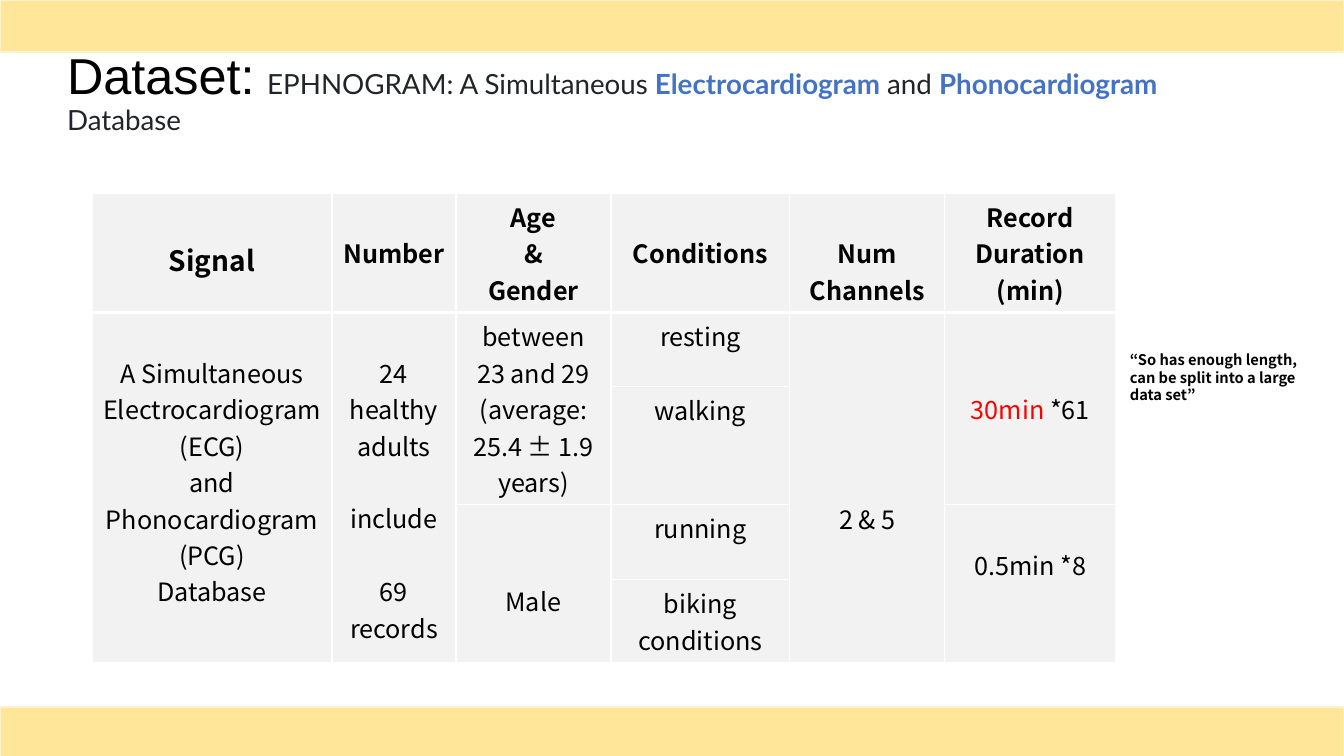
from lxml.etree import SubElement
from pptx import Presentation
from pptx.dml.color import RGBColor
from pptx.enum.shapes import MSO_SHAPE
from pptx.enum.text import MSO_ANCHOR, MSO_AUTO_SIZE, PP_ALIGN
from pptx.oxml.ns import qn
from pptx.util import Emu, Pt

EMU_PER_PX = 914400 / 100.8
WIDTH, HEIGHT = 1344, 756
BAND_HEIGHT = 52
INSET = 5
LINE_HEIGHT = 36.5
BODY_FONT = "Noto Sans CJK KR"
COLOURS = {
    "black": "000000", "white": "FFFFFF", "red": "FF0000", "blue": "4472C4",
    "title": "212529", "cell": "F2F2F2", "band": "FFE699", "band_line": "FFF2CC",
}

TITLE = [
    ("Dataset:", 36, "Arial", "black", False),
    (" ", 39.6, BODY_FONT, "black", False),
    ("EPHNOGRAM: A Simultaneous ", 19.8, "Lato", "title", False),
    ("Electrocardiogram", 19.8, "Lato", "blue", True),
    (" and ", 19.8, "Lato", "title", False),
    ("Phonocardiogram ", 19.8, "Lato", "blue", True),
    ("Database", 19.8, "Lato", "title", False),
]
COLUMNS = [240, 124, 155, 179, 155, 171]
ROWS = [119, 74, 118, 75, 82]
# Each header: lines left free above the text, size, paragraphs
HEADERS = [
    (1, 20, ["Signal"]),
    (1, 18, ["Number"]),
    (0, 18, ["Age", "&", "Gender"]),
    (1, 18, ["Conditions"]),
    (1, 18, ["Num Channels"]),
    (0, 18, ["Record Duration (min)"]),
]
# Each body cell: row, column, rows spanned, lines left free above, paragraphs
BODY = [
    (1, 0, 4, 1, ["A Simultaneous Electrocardiogram (ECG)", "and",
                  "Phonocardiogram (PCG)", "Database"]),
    (1, 1, 4, 1, ["24 healthy adults", "include", "69 records"]),
    (1, 2, 2, 0, ["between 23 and 29 (average: 25.4 ± 1.9 years)"]),
    (3, 2, 2, 2, ["Male"]),
    (1, 3, 1, 0, ["resting"]),
    (2, 3, 1, 0, ["walking"]),
    (3, 3, 1, 0, ["running"]),
    (4, 3, 1, 0, ["biking conditions"]),
    (1, 4, 4, 5, ["2 & 5"]),
    (1, 5, 2, 2, [[("30min ", "red"), ("*61", "black")]]),
    (3, 5, 2, 1, ["0.5min *8"]),
]
RECORDS_COLUMN = 1


def px(length):
    return Emu(round(length * EMU_PER_PX))


def rgb(name):
    return RGBColor.from_string(COLOURS[name])


class SlideBuilder:
    def __init__(self, presentation):
        self.slide = presentation.slides.add_slide(presentation.slide_layouts[5])

    def run(self, paragraph, text, size, font=BODY_FONT, colour="black", bold=False):
        run = paragraph.add_run()
        run.text = text
        run.font.size = Pt(size)
        run.font.name = font
        run.font.bold = bold
        run.font.color.rgb = rgb(colour)
        SubElement(run.font._element, qn("a:ea")).set("typeface", font)

    def title(self, runs, left, top, width, height):
        title = self.slide.shapes.title
        title.left, title.top = px(left), px(top)
        title.width, title.height = px(width), px(height)
        frame = title.text_frame
        frame.word_wrap = True
        frame.auto_size = MSO_AUTO_SIZE.NONE
        frame.vertical_anchor = MSO_ANCHOR.TOP
        paragraph = frame.paragraphs[0]
        paragraph.alignment = PP_ALIGN.LEFT
        paragraph.line_spacing = 0.9
        for run in runs:
            self.run(paragraph, *run)

    def band(self, top):
        shape = self.slide.shapes.add_shape(
            MSO_SHAPE.RECTANGLE, 0, px(top), px(WIDTH), px(BAND_HEIGHT))
        shape.shadow.inherit = False
        shape.fill.solid()
        shape.fill.fore_color.rgb = rgb("band")
        shape.line.color.rgb = rgb("band_line")
        shape.line.width = Pt(1)

    def note(self, text, left, top, width, height):
        box = self.slide.shapes.add_textbox(px(left), px(top), px(width), px(height))
        box.text_frame.word_wrap = True
        self.run(box.text_frame.paragraphs[0], text, 10.5, bold=True)

    def table(self, left, top, columns, rows):
        table = self.slide.shapes.add_table(
            len(rows), len(columns), px(left), px(top),
            px(sum(columns)), px(sum(rows))).table
        table.horz_banding = False
        for column, width in zip(table.columns, columns):
            column.width = px(width)
        for index, height in enumerate(rows):
            table.rows[index].height = px(height)
            for cell in table.rows[index].cells:
                self.borders(cell, top=3 if index == 1 else 1,
                             bottom=3 if index == 0 else 1)
                cell.fill.solid()
                cell.fill.fore_color.rgb = rgb("cell")
        return table

    def borders(self, cell, top, bottom):
        properties = cell._tc.get_or_add_tcPr()
        for side, width in (("L", 1), ("R", 1), ("T", top), ("B", bottom)):
            line = SubElement(properties, qn(f"a:ln{side}"), w=str(Pt(width)))
            fill = SubElement(line, qn("a:solidFill"))
            SubElement(fill, qn("a:srgbClr"), val=COLOURS["white"])

    def cell_text(self, cell, paragraphs, free_lines, size=18, bold=False, gap=0):
        """Fill a cell, starting below the given number of free lines."""
        cell.margin_top = px(INSET + free_lines * LINE_HEIGHT * size / 18)
        cell.margin_bottom = px(INSET)
        frame = cell.text_frame
        for index, content in enumerate(paragraphs):
            paragraph = frame.add_paragraph() if index else frame.paragraphs[0]
            paragraph.alignment = PP_ALIGN.CENTER
            if index and gap:
                paragraph.space_before = Pt(gap)
            runs = [(content, "black")] if isinstance(content, str) else content
            for text, colour in runs:
                self.run(paragraph, text, size, colour=colour, bold=bold)


def main():
    presentation = Presentation()
    presentation.slide_width, presentation.slide_height = px(WIDTH), px(HEIGHT)
    builder = SlideBuilder(presentation)
    builder.title(TITLE, 57, 42, 1204, 112)

    table = builder.table(92, 193, COLUMNS, ROWS)
    for column, (free_lines, size, paragraphs) in enumerate(HEADERS):
        builder.cell_text(table.cell(0, column), paragraphs, free_lines, size, bold=True)
    for row, column, span, free_lines, paragraphs in BODY:
        cell = table.cell(row, column)
        if span > 1:
            cell.merge(table.cell(row + span - 1, column))
        gap = 26 if column == RECORDS_COLUMN else 0
        builder.cell_text(cell, paragraphs, free_lines, gap=gap)

    builder.note("“So has enough length, can be split into a large data set”",
                 1120, 346, 196, 64)
    for top in (0, 707):
        builder.band(top)
    presentation.save("out.pptx")


if __name__ == "__main__":
    main()
